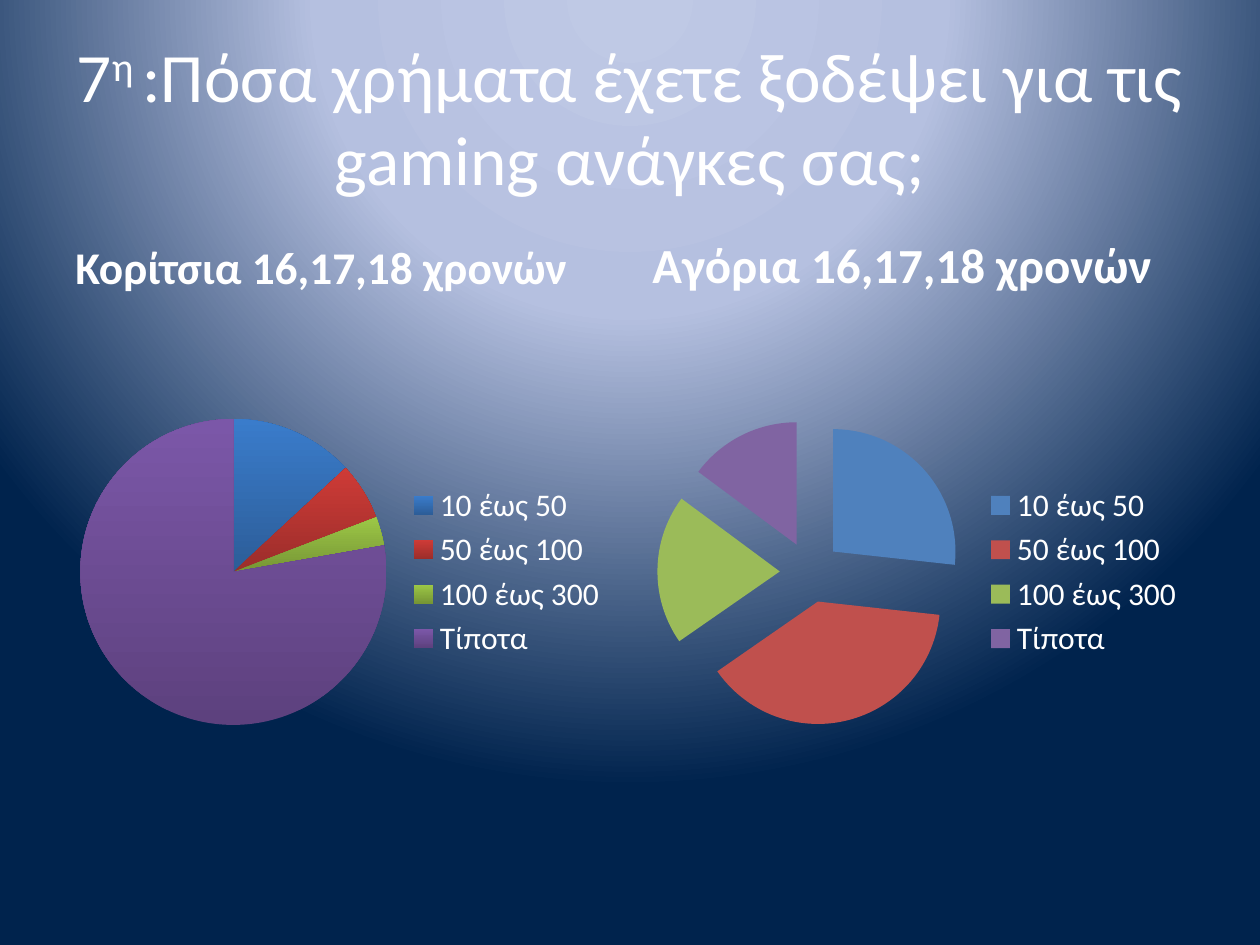
"""Build a slide comparing gaming spending of girls and boys in two pie charts."""
from lxml import etree
from pptx import Presentation
from pptx.chart.data import CategoryChartData
from pptx.dml.color import RGBColor
from pptx.enum.chart import XL_CHART_TYPE, XL_LEGEND_POSITION
from pptx.enum.text import MSO_ANCHOR, PP_ALIGN
from pptx.oxml import parse_xml
from pptx.oxml.ns import qn
from pptx.util import Inches, Pt

PIE = XL_CHART_TYPE.PIE
RIGHT = XL_LEGEND_POSITION.RIGHT
MIDDLE, BOTTOM = MSO_ANCHOR.MIDDLE, MSO_ANCHOR.BOTTOM
CENTER, LEFT = PP_ALIGN.CENTER, PP_ALIGN.LEFT
NS = "http://schemas.openxmlformats.org/drawingml/2006/main"

MARGIN, COL_W, COL_STEP = 0.5, 4.42, 4.58
HEAD_TOP, HEAD_H, CHART_H = 1.68, 0.7, 4.32
CATEGORIES = ["10 έως 50", "50 έως 100", "100 έως 300", "Τίποτα"]
FLAT = ["4F81BD", "C0504D", "9BBB59", "8064A2"]
SHADED = [("2C5D98", "3A7CCB"), ("9B2D2A", "CE3B37"),
          ("769535", "9CC746"), ("5D417E", "7B57A8")]
PANELS = [
    ("Κορίτσια 16,17,18 χρονών", 25.9, (13, 6, 3, 77), SHADED, 0),
    ("Αγόρια 16,17,18 χρονών", 28, (27, 39, 20, 15), FLAT, 25),
]
BACKDROP = [(0, "BFC9E5"), (40, "B5C0E0"), (100, "00234D")]


def style_font(font, size, bold=False):
    for name, value in {"name": "Calibri", "size": Pt(size), "bold": bold}.items():
        setattr(font, name, value)
    font.color.rgb = RGBColor.from_string("FFFFFF")


def add_text(s, box, runs, size, anchor, align, bold=False):
    tf = s.shapes.add_textbox(*map(Inches, box)).text_frame
    tf.word_wrap, tf.vertical_anchor = True, anchor
    p = tf.paragraphs[0]
    p.alignment = align
    for text, baseline in runs:
        r = p.add_run()
        r.text = text
        style_font(r.font, size, bold)
        if baseline:
            r.font._element.set("baseline", str(baseline * 1000))


prs = Presentation()
prs.slide_width, prs.slide_height = Inches(10), Inches(7.5)
s = prs.slides.add_slide(prs.slide_layouts[6])

fill = s.background.fill
fill.gradient()
grad = s._element.find(".//" + qn("a:gradFill"))
stops = "".join(f'<a:gs pos="{pos * 1000}"><a:srgbClr val="{color}"/></a:gs>'
                for pos, color in BACKDROP)
grad.getparent().replace(grad, parse_xml(
    f'<a:gradFill xmlns:a="{NS}" rotWithShape="1"><a:gsLst>{stops}</a:gsLst>'
    '<a:path path="circle"><a:fillToRect l="50000" t="-80000" r="50000" b="180000"/>'
    '</a:path></a:gradFill>'))

title = [("7", 0), ("η ", 30), (":Πόσα χρήματα έχετε ξοδέψει για τις gaming ανάγκες σας;", 0)]
add_text(s, (MARGIN, 0.3, 9, 1.25), title, 39.6, MIDDLE, CENTER)

for col, (heading, size, values, colors, explosion) in enumerate(PANELS):
    left = MARGIN + col * COL_STEP
    add_text(s, (left, HEAD_TOP, COL_W, HEAD_H), [(heading, 0)], size, BOTTOM, LEFT, True)

    data = CategoryChartData()
    data.categories = CATEGORIES
    data.add_series("Series 1", values)
    box = map(Inches, (left, HEAD_TOP + HEAD_H, COL_W, CHART_H))
    chart = s.shapes.add_chart(PIE, *box, data).chart
    style_font(chart.font, 18)
    chart.has_title = False
    chart.has_legend = True
    for name, value in {"position": RIGHT, "include_in_layout": False}.items():
        setattr(chart.legend, name, value)

    plot = chart.plots[0]
    plot.vary_by_categories = True
    series = plot.series[0]
    for i, color in enumerate(colors):
        fill = series.points[i].format.fill
        if isinstance(color, str):
            fill.solid()
            fill.fore_color.rgb = RGBColor.from_string(color)
        else:
            fill.gradient()
            fill.gradient_angle = 90
            for stop, shade in zip(fill.gradient_stops, color):
                stop.color.rgb = RGBColor.from_string(shade)
    if explosion:
        node = etree.Element(qn("c:explosion"), val=str(explosion))
        series._element.find(qn("c:tx")).addnext(node)

prs.save("out.pptx")
